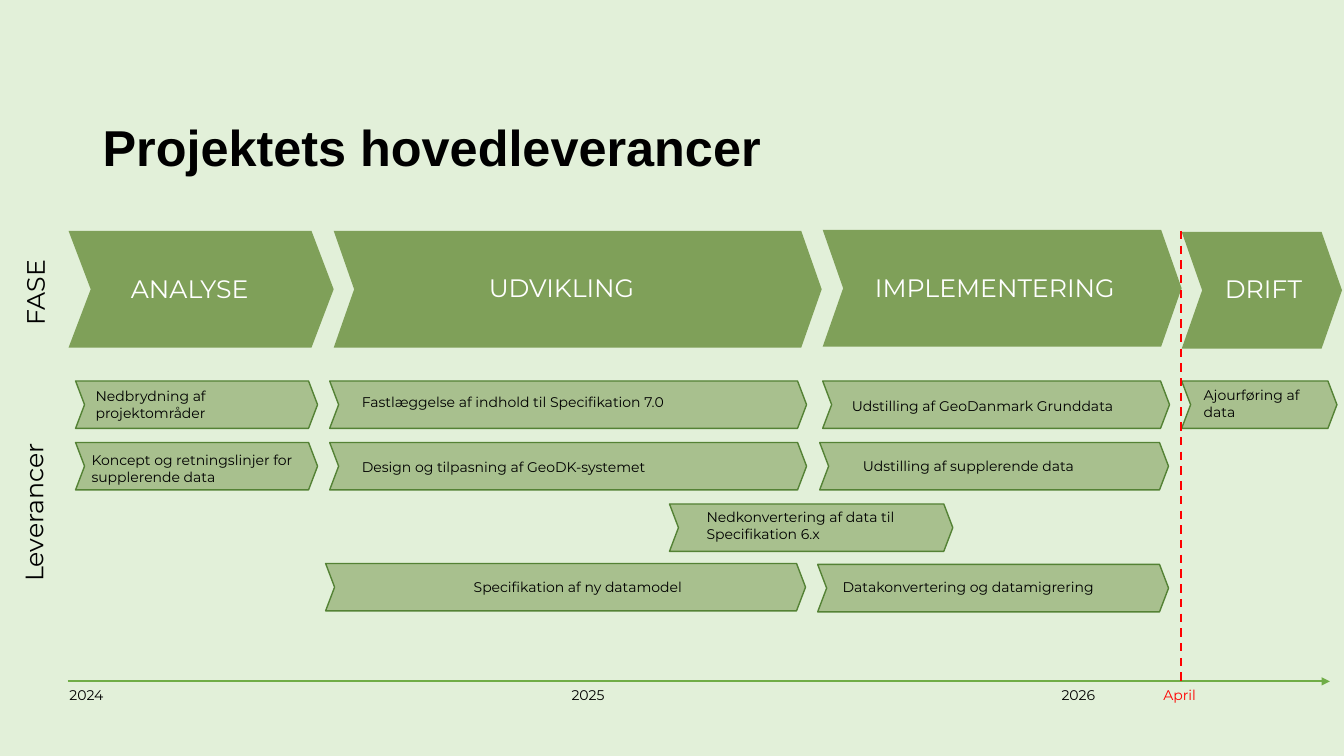
from lxml import etree
from pptx import Presentation
from pptx.dml.color import RGBColor
from pptx.enum.dml import MSO_LINE
from pptx.enum.shapes import MSO_CONNECTOR, MSO_SHAPE
from pptx.enum.text import MSO_ANCHOR
from pptx.oxml.ns import qn
from pptx.util import Inches, Pt

RECTANGLE, CHEVRON = MSO_SHAPE.RECTANGLE, MSO_SHAPE.CHEVRON
STRAIGHT = MSO_CONNECTOR.STRAIGHT
DASH = MSO_LINE.DASH
TOP, BOTTOM = MSO_ANCHOR.TOP, MSO_ANCHOR.BOTTOM

PALE = RGBColor(0xE2, 0xF0, 0xD9)
PHASE = RGBColor(0x7F, 0xA0, 0x59)
DELIVERY = RGBColor(0xA8, 0xC0, 0x8E)
OUTLINE = RGBColor(0x54, 0x82, 0x35)
AXIS = RGBColor(0x70, 0xAD, 0x47)
RED = RGBColor(0xFF, 0x00, 0x00)
BLACK = RGBColor(0x00, 0x00, 0x00)
WHITE = RGBColor(0xFF, 0xFF, 0xFF)

WIDTH, HEIGHT = 13.33, 7.5
PHASE_HEIGHT, DELIVERY_HEIGHT = 1.16, 0.47
AXIS_Y, APRIL_X = 6.76, 11.71


class Painter:
    """Holds the text style and the current slide."""

    style = {"name": "Montserrat", "size": Pt(10), "bold": False}

    def __init__(self, page):
        self.page = page

    def shape(self, kind, left, top, width, height, fill, outline=None):
        shape = self.page.shapes.add_shape(
            kind, Inches(left), Inches(top), Inches(width), Inches(height))
        shape.shadow.inherit = False
        shape.fill.solid()
        shape.fill.fore_color.rgb = fill
        if outline is None:
            shape.line.fill.background()
        else:
            shape.line.color.rgb = outline
            shape.line.width = Pt(1)
        return shape

    def chevron(self, left, top, width, height, fill, point, outline=None):
        shape = self.shape(CHEVRON, left, top, width, height, fill, outline)
        shape.adjustments[0] = point

    def text(self, words, left, top, width, height, color=BLACK,
             rotation=0, anchor=TOP, spacing=None, **changes):
        box = self.page.shapes.add_textbox(
            Inches(left), Inches(top), Inches(width), Inches(height))
        box.rotation = rotation
        box.text_frame.word_wrap = True
        box.text_frame.vertical_anchor = anchor
        para = box.text_frame.paragraphs[0]
        para.line_spacing = spacing
        span = para.add_run()
        span.text = words
        for key, value in {**self.style, **changes}.items():
            setattr(span.font, key, value)
        span.font.color.rgb = color

    def line(self, start, end, color, dash=None, arrow=False):
        line = self.page.shapes.add_connector(
            STRAIGHT, *(Inches(value) for value in (*start, *end)))
        line.line.color.rgb = color
        line.line.width = Pt(1.5)
        line.line.dash_style = dash
        if arrow:
            etree.SubElement(line.line._get_or_add_ln(), qn("a:tailEnd"), type="triangle")
        etree.SubElement(line._element.spPr, qn("a:effectLst"))


def main():
    deck = Presentation()
    deck.slide_width, deck.slide_height = Inches(WIDTH), Inches(HEIGHT)
    painter = Painter(deck.slides.add_slide(deck.slide_layouts[6]))

    # Background and title
    painter.shape(RECTANGLE, 0, 0, WIDTH, HEIGHT, PALE)
    painter.text("Projektets hovedleverancer", 0.92, 1.03, 10.54, 0.78, anchor=BOTTOM,
                 spacing=0.9, name="Arial", size=Pt(36), bold=True)

    # Row headings
    painter.text("FASE", -0.38, 2.4, 1.45, 0.4, rotation=270, size=Pt(18))
    painter.text("Leverancer", -1.36, 3.98, 3.38, 0.4, rotation=270, size=Pt(18))

    # Phases: name, chevron left, top, width, point, then label left, top, width
    phases = [
        ("ANALYSE", 0.68, 2.29, 2.63, 0.19, 1.2, 2.66, 2.44),
        ("UDVIKLING", 3.31, 2.29, 4.84, 0.175, 4.75, 2.65, 3.3),
        ("IMPLEMENTERING", 8.16, 2.28, 3.56, 0.175, 8.58, 2.65, 3.1),
        ("DRIFT", 11.72, 2.3, 1.59, 0.175, 12.05, 2.66, 1.14),
    ]
    for name, left, top, width, point, text_left, text_top, text_width in phases:
        painter.chevron(left, top, width, PHASE_HEIGHT, PHASE, point)
        painter.text(name, text_left, text_top, text_width, 0.4, WHITE, size=Pt(18))

    # Deliveries: name, chevron left, top, width, then label left, top, width, lines
    deliveries = [
        ("Nedbrydning af projektområder", 0.75, 3.78, 2.4, 0.85, 3.8, 2.3, 2),
        ("Koncept og retningslinjer for supplerende data",
         0.75, 4.39, 2.4, 0.81, 4.43, 2.5, 2),
        ("Fastlæggelse af indhold til Specifikation 7.0",
         3.27, 3.78, 4.73, 3.49, 3.85, 3.82, 1),
        ("Design og tilpasning af GeoDK-systemet", 3.27, 4.39, 4.73, 3.49, 4.5, 3.35, 1),
        ("Nedkonvertering af data til Specifikation 6.x",
         6.64, 5, 2.81, 6.91, 5, 2.18, 2),
        ("Specifikation af ny datamodel", 3.23, 5.59, 4.76, 4.6, 5.69, 2.56, 1),
        ("Udstilling af GeoDanmark Grunddata", 8.16, 3.78, 3.44, 8.35, 3.89, 3.04, 1),
        ("Udstilling af supplerende data", 8.13, 4.39, 3.46, 8.46, 4.49, 2.97, 1),
        ("Datakonvertering og datamigrering", 8.11, 5.6, 3.48, 8.26, 5.69, 3.05, 1),
        ("Ajourføring af data", 11.72, 3.78, 1.54, 11.84, 3.79, 1.25, 2),
    ]
    for name, left, top, width, text_left, text_top, text_width, lines in deliveries:
        painter.chevron(left, top, width, DELIVERY_HEIGHT, DELIVERY, 0.19, OUTLINE)
        painter.text(name, text_left, text_top, text_width, 0.1 + 0.17 * lines)

    # Time axis and the April deadline
    painter.line((0.67, AXIS_Y), (13.19, AXIS_Y), AXIS, arrow=True)
    painter.line((APRIL_X, 2.29), (APRIL_X, AXIS_Y), RED, dash=DASH)
    dates = [("2024", 0.59, BLACK), ("2025", 5.57, BLACK),
             ("2026", 10.43, BLACK), ("April", 11.44, RED)]
    for name, left, color in dates:
        painter.text(name, left, AXIS_Y, 0.62, 0.27, color)

    deck.save("out.pptx")


if __name__ == "__main__":
    main()
